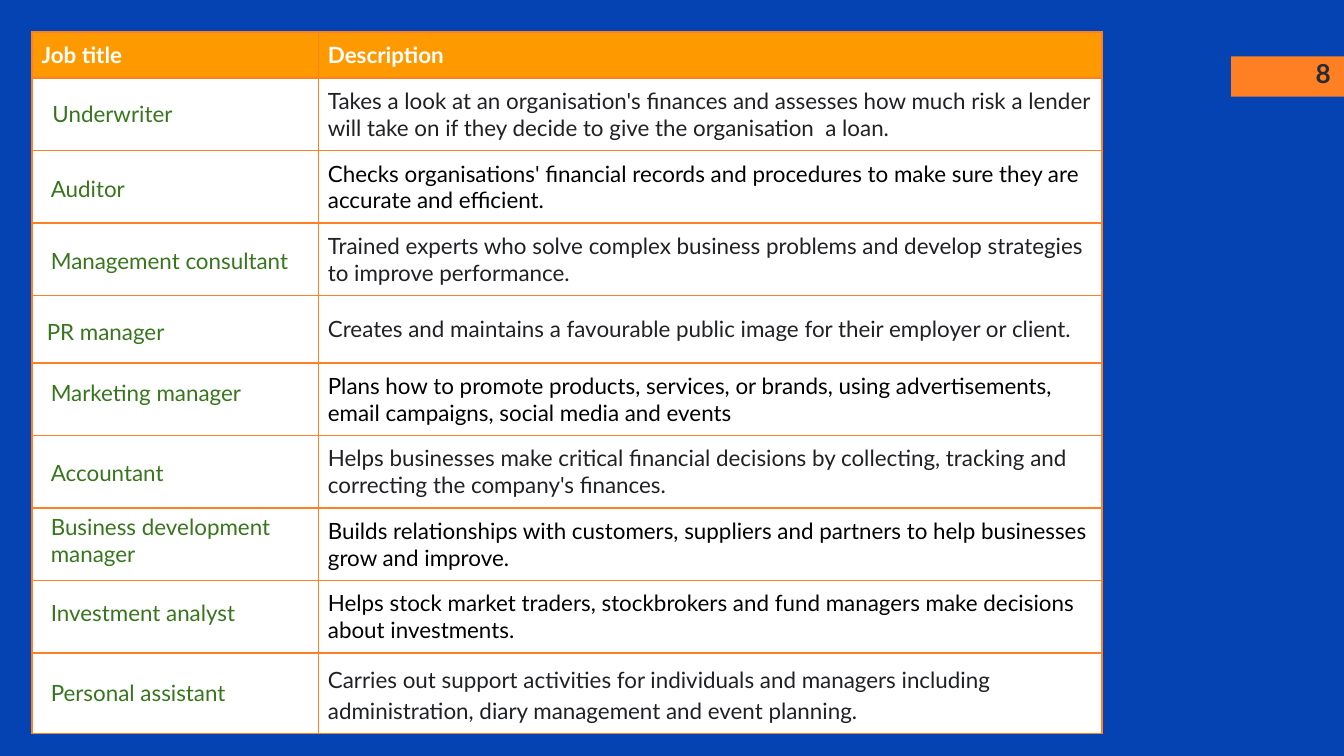
from pptx import Presentation
from pptx.dml.color import RGBColor
from pptx.enum.shapes import MSO_SHAPE as Shape
from pptx.enum.text import MSO_ANCHOR as Anchor, MSO_AUTO_SIZE as AutoSize, PP_ALIGN as Align
from pptx.oxml import parse_xml
from pptx.oxml.ns import nsdecls
from pptx.util import Inches, Pt

FONT = "Lato"
COLORS = {
    "page": "0543B3", "tag": "FF8022", "header": "FF9900", "white": "FFFFFF",
    "black": "000000", "grey": "202124", "green": "38761D", "number": "262A33",
}
COLUMNS = [2.13, 5.83]
ROWS = [0.31] + [0.5] * 8 + [0.55]
CELL_INSET = 0.07
BOX_INSET = 0.1

# Description and its text colour
DESCRIPTIONS = [
    ("Takes a look at an organisation's finances and assesses how much risk a lender "
     "will take on if they decide to give the organisation  a loan.", "grey"),
    ("Checks organisations' financial records and procedures to make sure they are "
     "accurate and efficient.", "black"),
    ("Trained experts who solve complex business problems and develop strategies "
     "to improve performance.", "grey"),
    ("Creates and maintains a favourable public image for their employer or client.", "grey"),
    ("Plans how to promote products, services, or brands, using advertisements, "
     "email campaigns, social media and events", "black"),
    ("Helps businesses make critical financial decisions by collecting, tracking and "
     "correcting the company's finances.", "grey"),
    ("Builds relationships with customers, suppliers and partners to help businesses "
     "grow and improve.", "black"),
    ("Helps stock market traders, stockbrokers and fund managers make decisions "
     "about investments.", "black"),
    ("Carries out support activities for individuals and managers including "
     "administration, diary management and event planning.", "grey"),
]

# Job title, left, top, width, height, fill, line spacing
JOB_LABELS = [
    ("Auditor", 0.28, 1.2, 1.11, 0.4, "white", None),
    ("Management consultant", 0.28, 1.74, 2.09, 0.4, None, None),
    ("PR manager", 0.25, 2.27, 2, 0.4, "white", None),
    ("Marketing manager", 0.28, 2.72, 2, 0.4, "white", None),
    ("Accountant", 0.28, 3.32, 2, 0.4, "white", None),
    ("Business development manager", 0.28, 3.72, 2, 0.61, None, None),
    ("Investment analyst", 0.28, 4.36, 2, 0.4, "white", None),
    ("Personal assistant", 0.28, 4.92, 2, 0.4, "white", 1.15),
]


def rgb(name):
    return RGBColor.from_string(COLORS[name])


def paint(item, color):
    item.fill.solid()
    item.fill.fore_color.rgb = rgb(color)


def set_insets(item, inset):
    item.margin_left = item.margin_right = Inches(inset)
    item.margin_top = item.margin_bottom = Inches(inset)


def write(frame, text, color, size=12, bold=False, spacing=None, align=Align.LEFT):
    para = frame.paragraphs[0]
    para.alignment = align
    para.line_spacing = spacing
    span = para.add_run()
    span.text = text
    span.font.name, span.font.size, span.font.bold = FONT, Pt(size), bold
    span.font.color.rgb = rgb(color)


def add_borders(cell, color, width=1):
    props = cell._tc.get_or_add_tcPr()
    for index, side in enumerate(("lnL", "lnR", "lnT", "lnB")):
        props.insert(index, parse_xml(
            f'<a:{side} {nsdecls("a")} w="{Pt(width)}"><a:solidFill>'
            f'<a:srgbClr val="{COLORS[color]}"/></a:solidFill></a:{side}>'))


def add_rectangle(page, area, fill):
    box = page.shapes.add_shape(Shape.RECTANGLE, *map(Inches, area))
    box.shadow.inherit = False
    paint(box, fill)
    box.line.fill.background()
    return box


def add_text(page, area, text, color, fill=None, grow=False, **style):
    if fill:
        box = add_rectangle(page, area, fill)
    else:
        box = page.shapes.add_textbox(*map(Inches, area))
    frame = box.text_frame
    frame.word_wrap = True
    frame.vertical_anchor = Anchor.TOP
    set_insets(frame, BOX_INSET)
    if grow:
        frame.auto_size = AutoSize.SHAPE_TO_FIT_TEXT
    write(frame, text, color, **style)


def add_job_table(page):
    frame = page.shapes.add_table(
        len(ROWS), len(COLUMNS), Inches(0.24), Inches(0.24),
        Inches(sum(COLUMNS)), Inches(sum(ROWS)))
    table = frame.table
    for column, width in zip(table.columns, COLUMNS):
        column.width = Inches(width)
    for index, (row, height) in enumerate(zip(table.rows, ROWS)):
        row.height = Inches(height)
        for cell in row.cells:
            paint(cell, "white" if index else "header")
            add_borders(cell, "tag")
            set_insets(cell, CELL_INSET)
            cell.vertical_anchor = Anchor.MIDDLE if index else Anchor.TOP

    # Header and the one job title held in the table
    for column, text in enumerate(("Job title", "Description")):
        write(table.cell(0, column).text_frame, text, "white", bold=True)
    first = table.cell(1, 0)
    first.margin_left = Inches(0.15)
    write(first.text_frame, "Underwriter", "green")

    # Descriptions, the last one set looser
    for index, (text, color) in enumerate(DESCRIPTIONS, 1):
        spacing = 1.15 if index == len(DESCRIPTIONS) else None
        write(table.cell(index, 1).text_frame, text, color, spacing=spacing)


def main():
    # Widescreen page, 16 to 9
    deck = Presentation()
    deck.slide_width = Inches(10)
    deck.slide_height = deck.slide_width * 9 // 16
    page = deck.slides.add_slide(deck.slide_layouts[6])
    paint(page.background, "page")

    # Tag behind the page number
    add_rectangle(page, (9.16, 0.42, 0.84, 0.3), "tag")
    add_job_table(page)
    add_text(page, (9.4, 0.33, 0.6, 0.43), "8", "number",
             size=14, bold=True, align=Align.RIGHT)

    # Job titles laid over the first column
    for text, *area, fill, spacing in JOB_LABELS:
        add_text(page, area, text, "green", fill, grow=True, spacing=spacing)

    deck.save("out.pptx")


if __name__ == "__main__":
    main()
